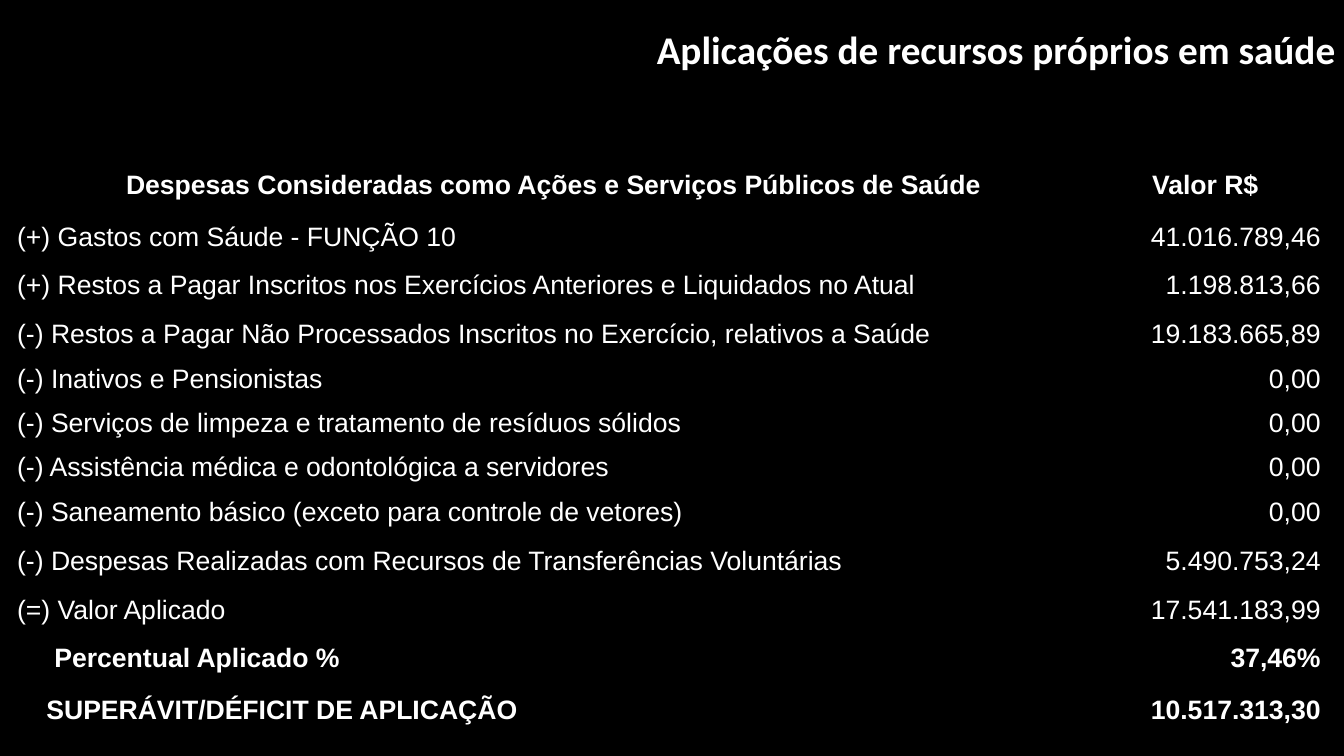
"""Build a slide with a table of own resources spent on health."""
import pptx
import pptx.util
import pptx.dml.color
import pptx.enum.text
import pptx.oxml
import pptx.oxml.ns

THEME = {
    "back": pptx.dml.color.RGBColor(0, 0, 0),
    "ink": pptx.dml.color.RGBColor(255, 255, 255),
    "edge": "000000",
    "head": ("Calibri", 28),
    "body": ("Arial", 19),
}
ALIGN = pptx.enum.text.PP_ALIGN
INCH = pptx.util.Inches
COLS = [4.58, 1.32, 1.43, 1.03, 0.14, 0.26, 0.28, 0.88, 0.19, 0.29, 0.24, 2.29]
TALL = {0: 0.58, 2: 0.53, 8: 0.54, 10: 0.51, 11: 0.51}
LOW = 0.44
LAST = len(COLS) - 1
INDENT = {10: 0.37, 11: 0.29}
BOLD = {0, 10, 11}
ROWS = [
    ("Despesas Consideradas como Ações e Serviços Públicos de Saúde", "Valor R$", 11),
    ("(+) Gastos com Sáude - FUNÇÃO 10", "41.016.789,46", 1),
    ("(+) Restos a Pagar Inscritos nos Exercícios Anteriores e Liquidados no Atual", "1.198.813,66", 8),
    ("(-) Restos a Pagar Não Processados Inscritos no Exercício, relativos a Saúde", "19.183.665,89", 8),
    ("(-) Inativos e Pensionistas", "0,00", 1),
    ("(-) Serviços de limpeza e tratamento de resíduos sólidos", "0,00", 7),
    ("(-) Assistência médica e odontológica a servidores", "0,00", 6),
    ("(-) Saneamento básico (exceto para controle de vetores)", "0,00", 4),
    ("(-) Despesas Realizadas com Recursos de Transferências Voluntárias", "5.490.753,24", 4),
    ("(=) Valor Aplicado", "17.541.183,99", 4),
    ("Percentual Aplicado %", "37,46%", 5),
    ("SUPERÁVIT/DÉFICIT DE APLICAÇÃO", "10.517.313,30", 6),
]


def write(frame, text, kind, bold, align):
    """Add one styled run to the first paragraph of a text frame."""
    para = frame.paragraphs[0]
    para.alignment = align
    run = para.add_run()
    run.text = text
    run.font.name, size = THEME[kind]
    run.font.size = pptx.util.Pt(size)
    run.font.bold = bold
    run.font.color.rgb = THEME["ink"]
    return para


def trim(cell):
    """Clear a cell's fill and margins and give it thin edges."""
    cell.fill.background()
    cell.margin_left = cell.margin_right = cell.margin_top = cell.margin_bottom = 0
    cell.vertical_anchor = pptx.enum.text.MSO_ANCHOR.MIDDLE
    props = cell._tc.get_or_add_tcPr()
    for spot, side in enumerate("LRTB"):
        props.insert(spot, pptx.oxml.parse_xml(
            f'<a:ln{side} {pptx.oxml.ns.nsdecls("a")} w="6350"><a:solidFill>'
            f'<a:srgbClr val="{THEME["edge"]}"/></a:solidFill></a:ln{side}>'))


deck = pptx.Presentation()
deck.slide_width, deck.slide_height = INCH(13.33), INCH(7.5)
slide = deck.slides.add_slide(deck.slide_layouts[6])
slide.background.fill.solid()
slide.background.fill.fore_color.rgb = THEME["back"]

title = slide.shapes.add_textbox(INCH(4.91), INCH(0.2), INCH(8.43), INCH(0.57))
title.text_frame.word_wrap = True
title.text_frame.auto_size = pptx.enum.text.MSO_AUTO_SIZE.SHAPE_TO_FIT_TEXT
write(title.text_frame, "Aplicações de recursos próprios em saúde", "head", True, ALIGN.RIGHT)

highs = [TALL.get(row, LOW) for row in range(len(ROWS))]
grid = slide.shapes.add_table(len(ROWS), len(COLS), INCH(0.17), INCH(1.55),
                              INCH(sum(COLS)), INCH(sum(highs))).table
grid.first_row = grid.horz_banding = False
for col, wide in enumerate(COLS):
    grid.columns[col].width = INCH(wide)

for row, (label, value, span) in enumerate(ROWS):
    grid.rows[row].height = INCH(highs[row])
    for col in range(len(COLS)):
        trim(grid.cell(row, col))
    if span > 1:
        grid.cell(row, 0).merge(grid.cell(row, span - 1))
    else:
        grid.cell(row, 3).merge(grid.cell(row, 7))
    left, right = (ALIGN.LEFT, ALIGN.RIGHT) if row else (ALIGN.CENTER, ALIGN.CENTER)
    para = write(grid.cell(row, 0).text_frame, label, "body", row in BOLD, left)
    if row in INDENT:
        para._p.get_or_add_pPr().set("marL", str(INCH(INDENT[row])))
    write(grid.cell(row, LAST).text_frame, value, "body", row in BOLD, right)

deck.save("out.pptx")
